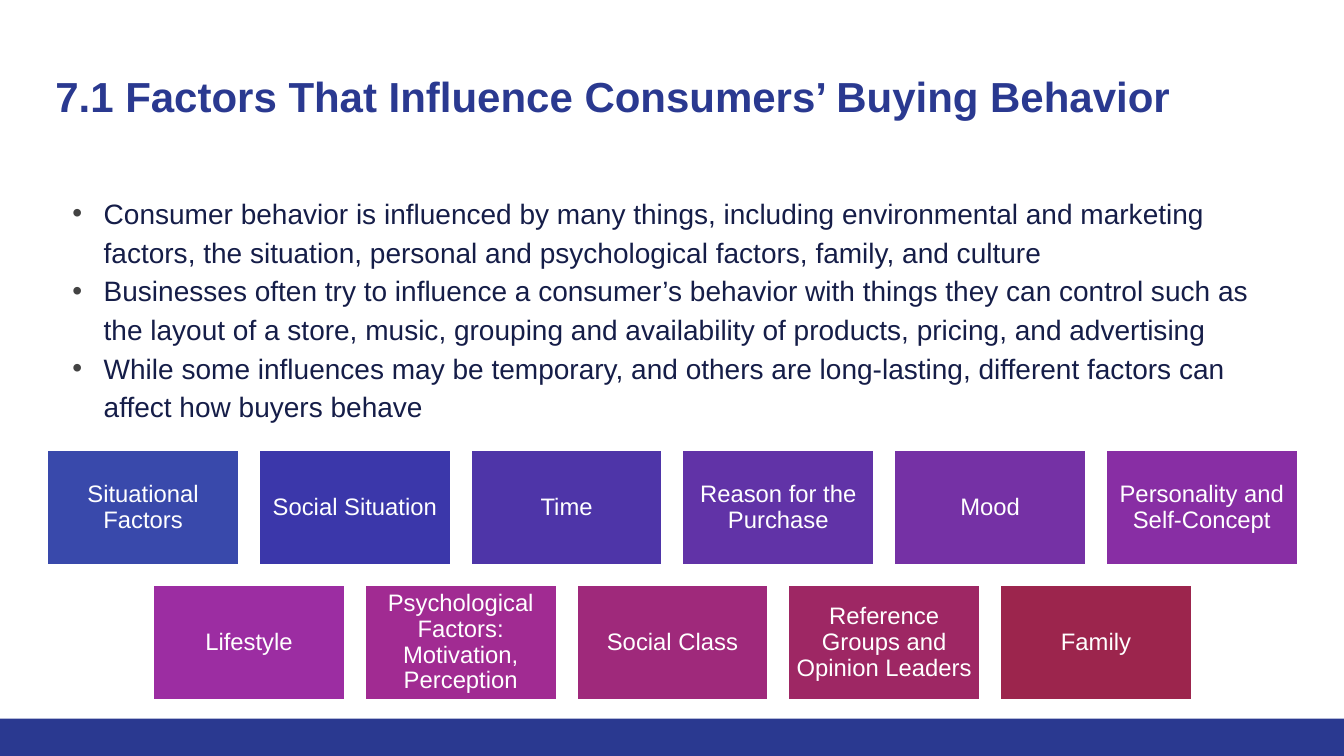
from lxml.etree import SubElement
from pptx import Presentation
from pptx.dml.color import RGBColor
from pptx.enum.shapes import MSO_SHAPE
from pptx.enum.text import MSO_ANCHOR, PP_ALIGN
from pptx.oxml.ns import qn
from pptx.util import Inches, Pt

SLIDE_WIDTH, SLIDE_HEIGHT = 13.33, 7.5
FONT = "Arial"
NAVY = RGBColor(0x2A, 0x39, 0x90)
INK = RGBColor(0x15, 0x1D, 0x48)
BULLET_GRAY = "434343"
WHITE = RGBColor(0xFF, 0xFF, 0xFF)

TITLE = "7.1 Factors That Influence Consumers’ Buying Behavior"
POINTS = [
    "Consumer behavior is influenced by many things, including environmental and "
    "marketing factors, the situation, personal and psychological factors, family, "
    "and culture",
    "Businesses often try to influence a consumer’s behavior with things they can "
    "control such as the layout of a store, music, grouping and availability of "
    "products, pricing, and advertising",
    "While some influences may be temporary, and others are long-lasting, different "
    "factors can affect how buyers behave",
]
FACTOR_ROWS = [
    [
        ("Situational Factors", RGBColor(0x39, 0x49, 0xAB)),
        ("Social Situation", RGBColor(0x3B, 0x37, 0xAA)),
        ("Time", RGBColor(0x4E, 0x35, 0xA8)),
        ("Reason for the Purchase", RGBColor(0x61, 0x33, 0xA7)),
        ("Mood", RGBColor(0x75, 0x31, 0xA5)),
        ("Personality and Self-Concept", RGBColor(0x88, 0x2E, 0xA4)),
    ],
    [
        ("Lifestyle", RGBColor(0x9C, 0x2D, 0xA2)),
        ("Psychological Factors: Motivation, Perception", RGBColor(0xA1, 0x2B, 0x92)),
        ("Social Class", RGBColor(0x9F, 0x29, 0x7B)),
        ("Reference Groups and Opinion Leaders", RGBColor(0x9E, 0x27, 0x64)),
        ("Family", RGBColor(0x9C, 0x25, 0x4D)),
    ],
]
TILE_WIDTH, TILE_HEIGHT, TILE_GAP = 1.91, 1.15, 0.19


def prepare_frame(shape, inset):
    frame = shape.text_frame
    frame.word_wrap = True
    frame.margin_left = frame.margin_right = Inches(inset)
    frame.margin_top = frame.margin_bottom = Inches(inset)
    return frame


def style_text(para, size, color, bold=False):
    for span in para.runs:
        span.font.name = FONT
        span.font.size = Pt(size)
        span.font.bold = bold
        span.font.color.rgb = color


def add_rectangle(slide, left, top, width, height, fill):
    shape = slide.shapes.add_shape(
        MSO_SHAPE.RECTANGLE, Inches(left), Inches(top), Inches(width), Inches(height))
    shape.shadow.inherit = False
    shape.fill.solid()
    shape.fill.fore_color.rgb = fill
    shape.line.fill.background()
    return shape


def add_text_box(slide, left, top, width, height):
    box = slide.shapes.add_textbox(
        Inches(left), Inches(top), Inches(width), Inches(height))
    return prepare_frame(box, 0.1)


def add_title(slide, left, top, width, height):
    para = add_text_box(slide, left, top, width, height).paragraphs[0]
    para.text = TITLE
    style_text(para, 30, NAVY, bold=True)


def set_bullet(para):
    properties = para._p.get_or_add_pPr()
    properties.set("marL", str(Inches(0.48)))
    properties.set("indent", str(Inches(-0.31)))
    color = SubElement(properties, qn("a:buClr"))
    SubElement(color, qn("a:srgbClr"), val=BULLET_GRAY)
    SubElement(properties, qn("a:buFont"), typeface=FONT)
    SubElement(properties, qn("a:buChar"), char="•")


def add_points(slide, left, top, width, height):
    frame = add_text_box(slide, left, top, width, height)
    frame.text = "\n".join(POINTS)
    for para in frame.paragraphs:
        set_bullet(para)
        para.line_spacing = 1.15
        style_text(para, 20, INK)


def add_tile(slide, left, top, label, fill):
    tile = add_rectangle(slide, left, top, TILE_WIDTH, TILE_HEIGHT, fill)
    tile.line.color.rgb = WHITE
    tile.line.width = Pt(2)
    frame = prepare_frame(tile, 0.07)
    frame.vertical_anchor = MSO_ANCHOR.MIDDLE
    para = frame.paragraphs[0]
    para.text = label
    para.alignment = PP_ALIGN.CENTER
    para.line_spacing = 0.9
    style_text(para, 17, WHITE)


def add_factor_grid(slide, left, top, width):
    """Stack the rows of tiles, each centred across the given width."""
    for row, factors in enumerate(FACTOR_ROWS):
        row_width = len(factors) * (TILE_WIDTH + TILE_GAP) - TILE_GAP
        row_left = left + (width - row_width) / 2
        row_top = top + row * (TILE_HEIGHT + TILE_GAP)
        for column, (label, fill) in enumerate(factors):
            tile_left = row_left + column * (TILE_WIDTH + TILE_GAP)
            add_tile(slide, tile_left, row_top, label, fill)


def main():
    deck = Presentation()
    deck.slide_width = Inches(SLIDE_WIDTH)
    deck.slide_height = Inches(SLIDE_HEIGHT)
    slide = deck.slides.add_slide(deck.slide_layouts[6])
    add_rectangle(slide, 0, 7.13, SLIDE_WIDTH, 0.37, NAVY)
    add_title(slide, 0.45, 0.6, 12.42, 0.89)
    add_points(slide, 0.45, 1.8, 12.42, 5.11)
    add_factor_grid(slide, 0.46, 4.46, 12.42)
    deck.save("out.pptx")


if __name__ == "__main__":
    main()
